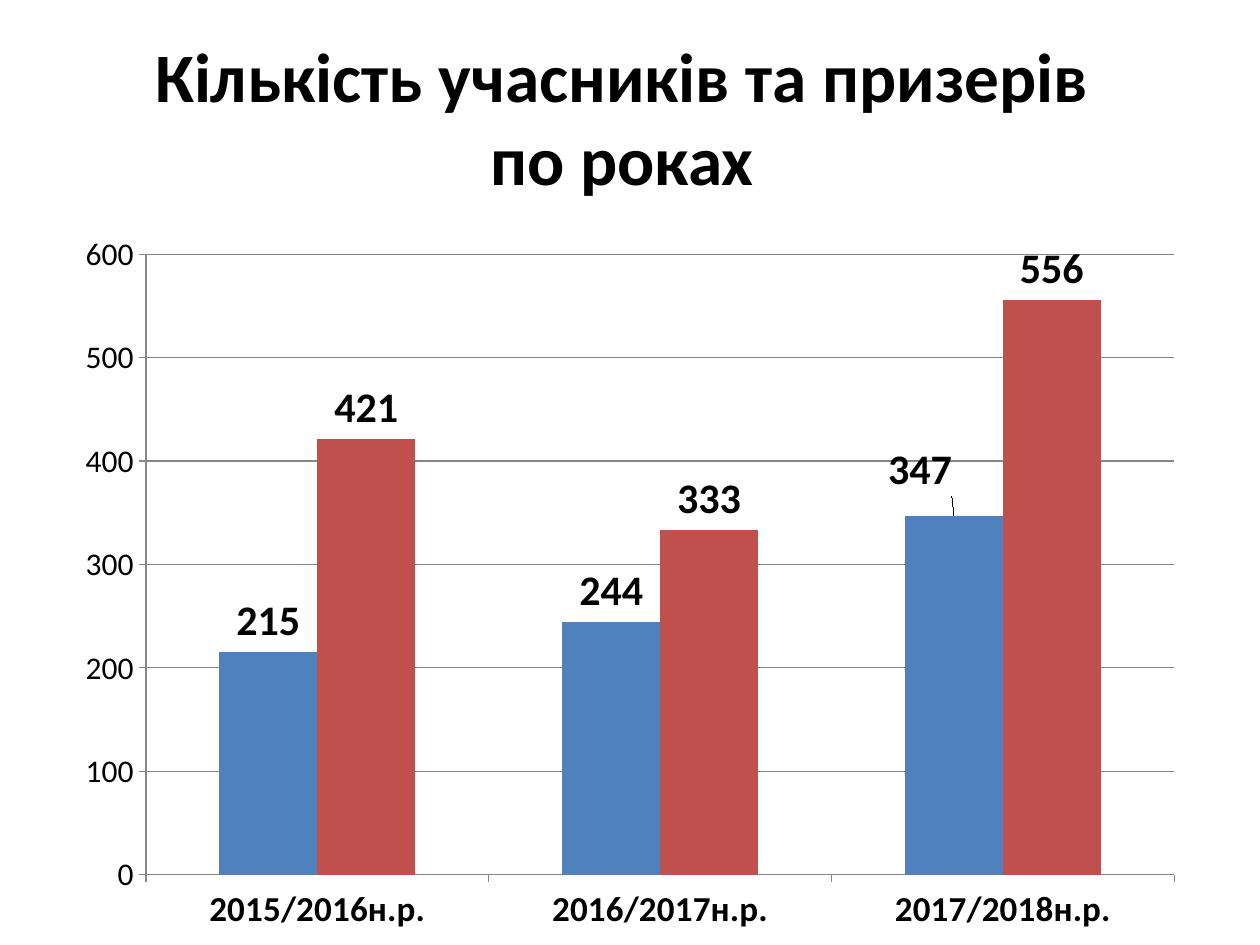
from dataclasses import dataclass
from typing import Any

from lxml import etree
from pptx import Presentation
from pptx import util as u
from pptx.chart.data import CategoryChartData
from pptx.dml.color import RGBColor
from pptx.enum import chart as charts, text
from pptx.oxml.ns import qn


@dataclass(frozen=True)
class Theme:
    font: str = "Calibri"
    ink: RGBColor = RGBColor(0, 0, 0)
    grid: RGBColor = RGBColor(0x86, 0x86, 0x86)
    title: float = 39.6
    body: float = 18
    category: float = 20
    label: float = 24


@dataclass(frozen=True)
class Columns:
    name: str
    values: tuple[int, ...]
    color: RGBColor


THEME = Theme()
TITLE_LINES = ("Кількість учасників та призерів ", "по роках ")
YEARS = ("2015/2016н.р.", "2016/2017н.р.", "2017/2018н.р.")
SERIES = (
    Columns("Series 1", (215, 244, 347), RGBColor(0x4F, 0x81, 0xBD)),
    Columns("Series 2", (421, 333, 556), RGBColor(0xC0, 0x50, 0x4D)),
)


def apply(target: Any, values: dict[str, Any]) -> None:
    for name, value in values.items():
        setattr(target, name, value)


def style_font(font: Any, size: float, bold: bool = False) -> None:
    apply(font, {"name": THEME.font, "size": u.Pt(size), "bold": bold})
    font.color.rgb = THEME.ink


def add_title(page: Any) -> None:
    box = page.shapes.add_textbox(u.Cm(1.27), u.Cm(0.76), u.Cm(22.86), u.Cm(3.18))
    frame = box.text_frame
    apply(frame, {"word_wrap": True, "vertical_anchor": text.MSO_ANCHOR.MIDDLE})
    para = frame.paragraphs[0]
    para.alignment = text.PP_ALIGN.CENTER
    for index, line in enumerate(TITLE_LINES):
        if index:
            para.add_line_break()
        span = para.add_run()
        span.text = line
        style_font(span.font, THEME.title, True)


def style_line(line: Any) -> None:
    line.color.rgb = THEME.grid
    line.width = u.Pt(0.75)


def style_axis(axis: Any, size: float, bold: bool) -> None:
    apply(axis, {"major_tick_mark": charts.XL_TICK_MARK.OUTSIDE,
                 "minor_tick_mark": charts.XL_TICK_MARK.NONE})
    style_font(axis.tick_labels.font, size, bold)
    style_line(axis.format.line)


def shift_label(series: Any, index: int, x: float, y: float) -> None:
    label = series.points[index].data_label
    style_font(label.font, THEME.label, True)
    label.position = charts.XL_LABEL_POSITION.OUTSIDE_END
    mark = series.data_labels._element.find(qn("c:dLbl"))
    layout = etree.Element(qn("c:layout"))
    manual = etree.SubElement(layout, qn("c:manualLayout"))
    for axis, offset in (("x", x), ("y", y)):
        etree.SubElement(manual, qn(f"c:{axis}")).set("val", str(offset))
    mark.find(qn("c:idx")).addnext(layout)


def add_columns(page: Any) -> None:
    data = CategoryChartData()
    data.categories = YEARS
    for columns in SERIES:
        data.add_series(columns.name, columns.values)
    chart = page.shapes.add_chart(
        charts.XL_CHART_TYPE.COLUMN_CLUSTERED,
        u.Cm(1.27), u.Cm(4.45), u.Cm(22.86), u.Cm(14.6), data).chart
    apply(chart, {"has_legend": False, "has_title": False})
    style_font(chart.font, THEME.body)
    style_axis(chart.category_axis, THEME.category, True)
    style_axis(chart.value_axis, THEME.body, False)
    apply(chart.value_axis, {"minimum_scale": 0, "maximum_scale": 600,
                             "major_unit": 100, "has_major_gridlines": True})
    style_line(chart.value_axis.major_gridlines.format.line)
    plot = chart.plots[0]
    apply(plot, {"gap_width": 150, "overlap": 0, "vary_by_categories": False})
    for series, columns in zip(plot.series, SERIES):
        series.format.fill.solid()
        series.format.fill.fore_color.rgb = columns.color
        apply(series.data_labels, {"show_value": True,
                                   "position": charts.XL_LABEL_POSITION.OUTSIDE_END})
        style_font(series.data_labels.font, THEME.label, True)
    shift_label(plot.series[0], 2, -0.03, -0.02)


def main() -> None:
    """Build the slide of participants and prize winners by school year."""
    deck = Presentation()
    apply(deck, {"slide_width": u.Cm(25.4), "slide_height": u.Cm(19.05)})
    page = deck.slides.add_slide(deck.slide_layouts[6])
    add_title(page)
    add_columns(page)
    deck.save("out.pptx")


if __name__ == "__main__":
    main()
